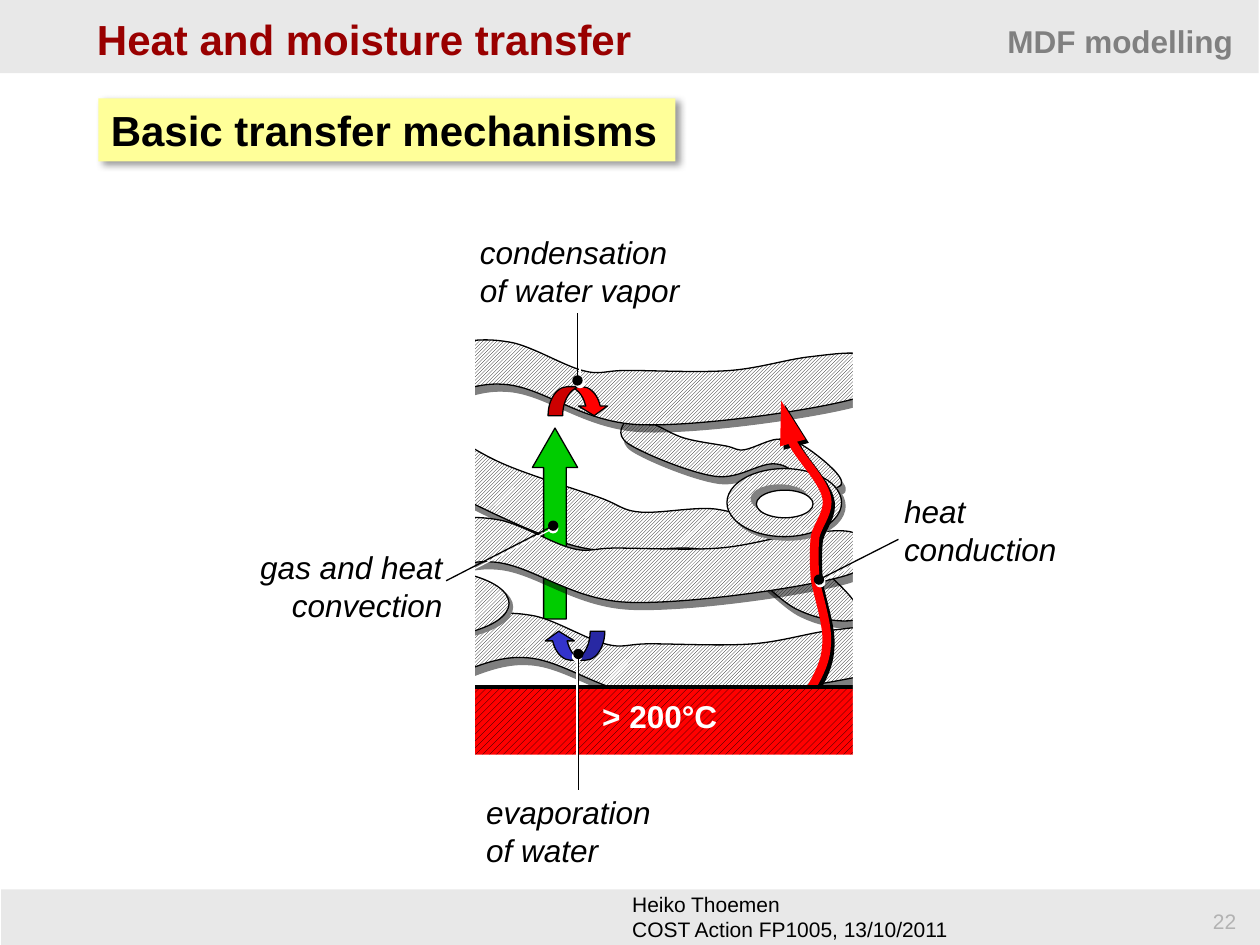
import pptx
import pptx.dml.color
import pptx.enum.dml
import pptx.enum.shapes
import pptx.enum.text
import pptx.oxml
import pptx.oxml.ns
import pptx.util

Pt = pptx.util.Pt
SHAPE = pptx.enum.shapes.MSO_SHAPE
ALIGN = pptx.enum.text.PP_ALIGN
PATTERN = pptx.enum.dml.MSO_PATTERN
LIGHT = PATTERN.LIGHT_UPWARD_DIAGONAL
WIDE = PATTERN.WIDE_UPWARD_DIAGONAL
DRAWING = pptx.oxml.ns.nsdecls("a")

FIBRE_SIZE = (318.2, 50.4)
# Start point, then one row per Bezier curve: two controls and an end point.
FIBRE = [
    (296.6, 33.8),
    (275, 40.3), (205.9, 50.4), (172.1, 49),
    (138.2, 47.5), (116.6, 26.6), (93.6, 25.9),
    (71.3, 24.5), (50.4, 40.3), (35.3, 41),
    (19.4, 42.5), (4.3, 37.4), (2.2, 33.8),
    (0, 29.5), (10.8, 23), (22.3, 18),
    (33.1, 13), (54.7, 5), (67.7, 2.2),
    (80.6, 0), (88.6, 0), (100.1, 2.2),
    (112.3, 5), (128.9, 15.1), (139.7, 18),
    (150.5, 20.9), (151.9, 18), (165.6, 18),
    (180, 18), (207.4, 19.4), (224.6, 18),
    (241.9, 16.6), (257, 11.5), (270.7, 10.1),
    (283.7, 8.6), (297.4, 6.5), (303.1, 10.1),
    (308.2, 14.4), (318.2, 27.4), (296.6, 33.8),
]
HEAT_PATH = [
    (459.4, 400.3),
    (465.1, 390.2), (471.6, 380.9), (472.3, 369.4),
    (473.8, 357.8), (467.3, 340.6), (465.8, 330.5),
    (465.1, 319.7), (465.1, 314.6), (465.8, 306.7),
    (467.3, 299.5), (474.5, 292.3), (472.3, 283.7),
    (470.2, 274.3), (457.2, 261.4), (452.9, 252.7),
    (448.6, 243.4), (445.7, 232.6), (446.4, 229),
]


def color(value):
    return pptx.dml.color.RGBColor.from_string(value)


def style(shape, fill=None, line=None, width=0.75, pattern=None, shadow=None):
    """Shadow is (colour, opacity %, blur, distance, angle)."""
    if pattern:
        shape.fill.patterned()
        shape.fill.pattern = pattern
        shape.fill.fore_color.rgb = color("000000")
        shape.fill.back_color.rgb = color(fill)
    elif fill:
        shape.fill.solid()
        shape.fill.fore_color.rgb = color(fill)
    else:
        shape.fill.background()
    if line:
        shape.line.color.rgb = color(line)
        shape.line.width = Pt(width)
    else:
        shape.line.fill.background()
    shape.shadow.inherit = False
    if shadow:
        tint, opacity, blur, distance, angle = shadow
        effects = shape._element.spPr.find(pptx.oxml.ns.qn("a:effectLst"))
        effects.append(pptx.oxml.parse_xml(
            f'<a:outerShdw {DRAWING} blurRad="{Pt(blur)}" dist="{Pt(distance)}" '
            f'dir="{angle * 60000}" algn="ctr" rotWithShape="0"><a:srgbClr val="{tint}">'
            f'<a:alpha val="{opacity * 1000}"/></a:srgbClr></a:outerShdw>'))
    return shape


def add_preset(page, kind, box, adjust=(), **look):
    shape = page.shapes.add_shape(kind, *map(Pt, box))
    for index, value in enumerate(adjust):
        shape.adjustments[index] = value
    return style(shape, **look)


def write(shape, lines, size, tint, bold=False, italic=False, align=ALIGN.LEFT):
    frame = shape.text_frame
    for index, line in enumerate(lines):
        para = frame.add_paragraph() if index else frame.paragraphs[0]
        para.alignment = align
        span = para.add_run()
        span.text = line
        span.font.name = "Arial"
        span.font.size = Pt(size)
        span.font.bold = bold
        span.font.italic = italic
        span.font.color.rgb = color(tint)


def add_text(page, box, lines, size, tint, wrap=False, **look):
    shape = page.shapes.add_textbox(*map(Pt, box))
    shape.text_frame.word_wrap = wrap
    write(shape, lines, size, tint, **look)


def add_curve(page, points, closed):
    """Lay out the points as a polygon, then join each three as one Bezier curve."""
    builder = page.shapes.build_freeform(*map(Pt, points[0]), scale=1.0)
    builder.add_line_segments([tuple(map(Pt, point)) for point in points[1:]], close=closed)
    shape = builder.convert_to_shape()
    segments = shape._element.xpath(".//a:lnTo")
    for first in range(0, len(points) - 1, 3):
        curve = pptx.oxml.parse_xml(f"<a:cubicBezTo {DRAWING}/>")
        segments[first].addprevious(curve)
        for segment in segments[first:first + 3]:
            curve.append(segment[0])
            segment.getparent().remove(segment)
    return shape


def add_line_end(shape, end, kind, length="med"):
    shape.line._get_or_add_ln().append(
        pptx.oxml.parse_xml(f'<a:{end} {DRAWING} type="{kind}" len="{length}"/>'))


def add_fibre(page, box, mirrored=False, turn=0):
    left, top, width, height = box
    points = []
    for px, py in FIBRE:
        x = px / FIBRE_SIZE[0]
        points.append((left + (1 - x if mirrored else x) * width,
                       top + py / FIBRE_SIZE[1] * height))
    fibre = style(add_curve(page, points, True), "FFFFFF", "000000", pattern=LIGHT,
                  shadow=("000000", 50, 0, 4.5, 63))
    fibre.rotation = turn


def add_cut_fibre(page, outer, inner):
    add_preset(page, SHAPE.OVAL, outer, fill="FFFFFF", line="000000", pattern=LIGHT,
               shadow=("808080", 100, 0, 2.8, 45))
    add_preset(page, SHAPE.OVAL, inner, fill="FFFFFF", line="000000",
               shadow=("808080", 100, 0, 4.2, 225))


def add_turn_arrow(page, box, fill, flip):
    shape = add_preset(page, SHAPE.CURVED_UP_ARROW, box, (0.5, 1, 0.333),
                       fill=fill, line="000000")
    shape._element.spPr.xfrm.set(flip, "1")


def add_callout(page, box, lines, dot, end, halo=0.75, align=ALIGN.LEFT):
    """Label with a dotted leader over a white halo line."""
    add_text(page, box, lines, 18, "000000", italic=True, align=align)
    for tint, dx, dy in (("FFFFFF", halo, 1.5), ("000000", 0, 0)):
        leader = page.shapes.add_connector(
            pptx.enum.shapes.MSO_CONNECTOR.STRAIGHT,
            Pt(dot[0] + dx), Pt(dot[1] + dy), Pt(end[0] + dx), Pt(end[1] + dy))
        leader.line.color.rgb = color(tint)
        leader.line.width = Pt(0.75)
        add_line_end(leader, "headEnd", "oval")
        leader._element.spPr.append(pptx.oxml.parse_xml(f"<a:effectLst {DRAWING}/>"))


def add_header(page, box):
    left, top, width, height = box
    title = page.shapes.title
    bar = add_preset(page, SHAPE.RECTANGLE, box, fill="E8E8E8")
    title._element.addprevious(bar._element)
    title.left, title.top = Pt(left + 48.2), Pt(top + 4.3)
    title.width, title.height = Pt(612), Pt(36)
    title.text_frame.vertical_anchor = pptx.enum.text.MSO_ANCHOR.MIDDLE
    write(title, ["Heat and moisture transfer"], 24, "990000", bold=True)
    add_text(page, (left + width - 206.3, top + 9, 198.7, 28.8), ["MDF modelling"], 18,
             "808080", wrap=True, bold=True, align=ALIGN.RIGHT)


def add_footer(page, box):
    left, top, width, height = box
    add_preset(page, SHAPE.RECTANGLE, box, fill="E8E8E8")
    add_text(page, (left + 353.5, top - 2.4, 196.6, 36),
             ["Heiko Thoemen", "COST Action FP1005, 13/10/2011"], 12, "000000")
    add_text(page, (left + width - 187.2, top + 7.2, 180.7, 18), ["22"], 12, "B2B2B2",
             wrap=True, align=ALIGN.RIGHT)


def add_heading(page, box):
    shape = add_preset(page, SHAPE.RECTANGLE, box, fill="FFFF99",
                       shadow=("000000", 40, 4, 3, 45))
    shape.text_frame.word_wrap = False
    write(shape, ["Basic transfer mechanisms"], 24, "000000", bold=True)


def add_fibre_mat(page, box):
    left, top, width, height = box
    right, bottom = left + width, top + height
    add_fibre(page, (349.9, 244.8, 133.9, 29.5), mirrored=True, turn=10.9)
    add_fibre(page, (186.5, 267.8, *FIBRE_SIZE), mirrored=True, turn=19.4)
    add_preset(page, SHAPE.UP_ARROW, (304.2, 244.6, 25.9, 109.1), (0.5, 0.872),
               fill="00CC00", line="000000")
    add_fibre(page, (205.9, 349.9, *FIBRE_SIZE))
    add_cut_fibre(page, (193, 325.4, 97.9, 38.9), (218.2, 337.7, 49, 15.8))
    add_fibre(page, (186.5, 295.2, *FIBRE_SIZE))
    add_cut_fibre(page, (415.4, 267.8, 65.5, 38.9), (432.2, 280.1, 32.4, 15.8))
    add_fibre(page, (193, 193.7, *FIBRE_SIZE))

    heat = style(add_curve(page, HEAT_PATH, False), line="FF0000", width=5,
                 shadow=("000000", 100, 0, 2.8, 45))
    add_line_end(heat, "tailEnd", "triangle", "lg")
    add_preset(page, SHAPE.RECTANGLE, (199.4, 392.6, 307.4, 46.8), fill="FF0000",
               line="000000", width=2, pattern=WIDE)
    side = height + 30.9
    for edge in ((left - 91.4, top, 91.4, side), (right, top, 32.4, side),
                 (left - 91.4, bottom, 326.9, 38.9)):
        add_preset(page, SHAPE.RECTANGLE, edge, fill="FFFFFF")
    add_text(page, (337, 394.6, 92.2, 39.6), ["> 200°C"], 18, "FFFFFF", bold=True)
    add_turn_arrow(page, (311, 360.7, 34.6, 16.6), "3333CC", "flipH")
    add_turn_arrow(page, (313.2, 221, 34.6, 16.6), "FF0000", "flipV")


def add_callouts(page):
    add_callout(page, (509.5, 277.5, 102.2, 51.1), ["heat", "conduction"],
                (468, 331.2), (513.4, 308.2))
    add_callout(page, (270.7, 449.6, 109.4, 51.1), ["evaporation", "of water"],
                (330.5, 373.7), (330.5, 451.4), halo=-0.75)
    add_callout(page, (267.1, 129.6, 129.6, 51.1), ["condensation", "of water vapor"],
                (330, 217.4), (330, 178.6), halo=1.5)
    add_callout(page, (140.4, 309.6, 119.5, 51.1), ["gas and heat", "convection"],
                (316.1, 300.4), (254.9, 331.9), halo=0, align=ALIGN.RIGHT)


def main():
    deck = pptx.Presentation()
    deck.slide_width, deck.slide_height = Pt(720), Pt(540)
    page = deck.slides.add_slide(deck.slide_layouts[5])
    add_header(page, (0, 0, 719.3, 41.8))
    add_heading(page, (56.2, 56.2, 329.8, 36))
    add_fibre_mat(page, (271.4, 166.3, 216, 265))
    add_callouts(page)
    add_footer(page, (0.7, 508.3, 719.3, 31.7))
    deck.save("out.pptx")


if __name__ == "__main__":
    main()
